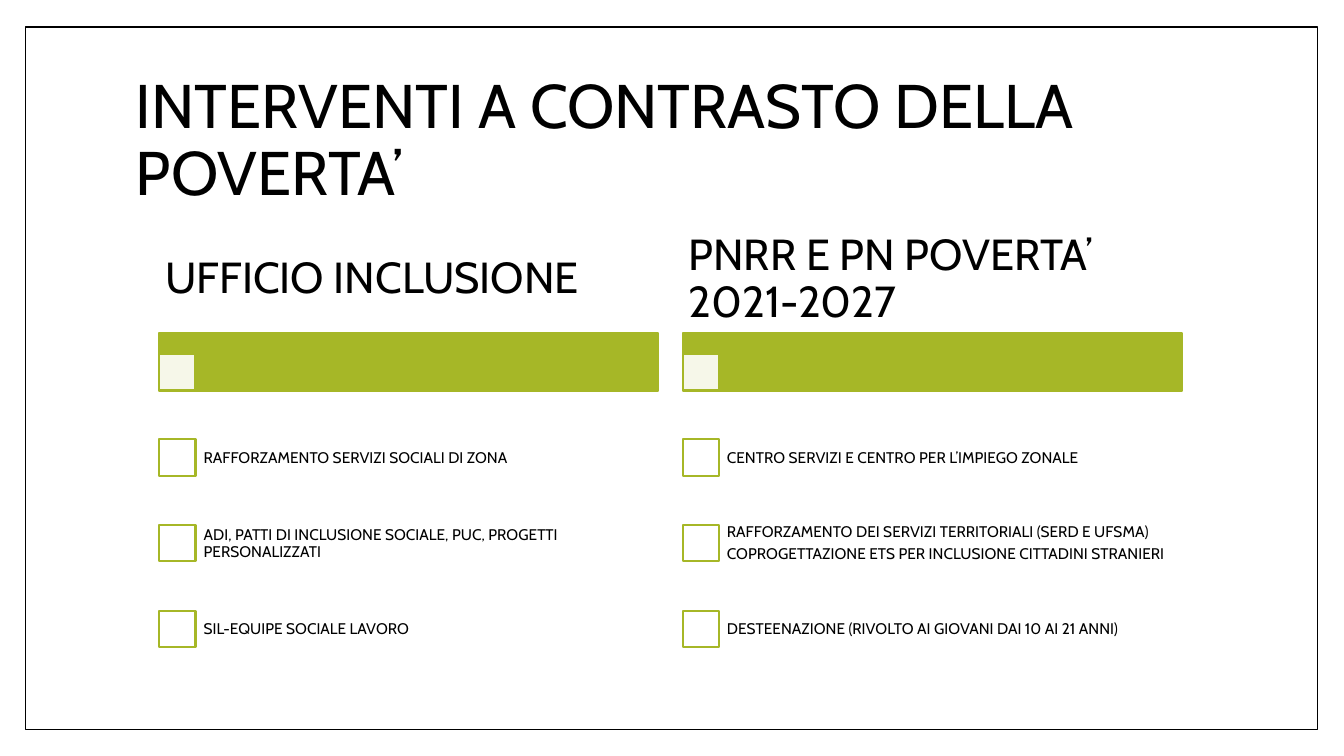
import pptx
import pptx.util
import pptx.dml.color
import pptx.enum.shapes
import pptx.enum.text
import pptx.oxml
import pptx.oxml.ns
from pptx.util import Inches

GREEN = "A6B727"
WHITE = "FFFFFF"
BLACK = "000000"
BOX_SIZE = 0.36
COLUMN_WIDTH = 4.95
ROW_HEIGHT = 0.85
FIRST_ROW_TOP = 4.12

COLUMNS = [
    (1.58, "UFFICIO INCLUSIONE", [
        ["RAFFORZAMENTO SERVIZI SOCIALI DI ZONA"],
        ["ADI, PATTI DI INCLUSIONE SOCIALE, PUC, PROGETTI PERSONALIZZATI"],
        ["SIL-EQUIPE SOCIALE LAVORO"],
    ]),
    (6.77, "PNRR E PN POVERTA’ 2021-2027", [
        ["CENTRO SERVIZI E CENTRO PER L’IMPIEGO ZONALE"],
        ["RAFFORZAMENTO DEI SERVIZI TERRITORIALI (SERD E UFSMA)",
         "COPROGETTAZIONE ETS PER INCLUSIONE CITTADINI STRANIERI"],
        ["DESTEENAZIONE (RIVOLTO AI GIOVANI DAI 10 AI 21 ANNI)"],
    ]),
]


def color(value):
    return pptx.dml.color.RGBColor.from_string(value)


def add_box(slide, left, top, width, height, fill, line=GREEN, line_width=1.5, opacity=100):
    box = slide.shapes.add_shape(
        pptx.enum.shapes.MSO_SHAPE.RECTANGLE,
        Inches(left), Inches(top), Inches(width), Inches(height))
    box.shadow.inherit = False
    box.fill.solid()
    box.fill.fore_color.rgb = color(fill)
    box.line.color.rgb = color(line)
    box.line.width = pptx.util.Pt(line_width)
    if opacity < 100:
        fill_color = box.fill._xPr.find(pptx.oxml.ns.qn("a:solidFill"))[0]
        alpha = pptx.oxml.parse_xml(
            f'<a:alpha {pptx.oxml.ns.nsdecls("a")} val="{opacity * 1000}"/>')
        fill_color.append(alpha)


def add_text(slide, left, top, width, height, lines, size, inset_x, inset_y, space_after):
    frame = slide.shapes.add_textbox(
        Inches(left), Inches(top), Inches(width), Inches(height)).text_frame
    frame.word_wrap = True
    frame.vertical_anchor = pptx.enum.text.MSO_ANCHOR.MIDDLE
    frame.margin_left = frame.margin_right = Inches(inset_x)
    frame.margin_top = frame.margin_bottom = Inches(inset_y)
    frame.text = "\n".join(lines)
    for paragraph in frame.paragraphs:
        paragraph.line_spacing = 0.9
        paragraph.space_after = pptx.util.Pt(space_after)
        paragraph.font.name = "Cabin"
        paragraph.font.size = pptx.util.Pt(size)
        paragraph.font.color.rgb = color(BLACK)


def add_column(slide, left, heading, items):
    add_box(slide, left, 3.3, COLUMN_WIDTH, 0.58, GREEN)
    add_box(slide, left, 3.51, BOX_SIZE, BOX_SIZE, WHITE, opacity=90)
    add_text(slide, left, 2.25, COLUMN_WIDTH, 1.05, [heading], 31, 0.06, 0.04, 11)
    for row, lines in enumerate(items):
        top = FIRST_ROW_TOP + row * ROW_HEIGHT
        add_box(slide, left, top + 0.24, BOX_SIZE, BOX_SIZE, WHITE)
        add_text(slide, left + 0.35, top, 4.6, ROW_HEIGHT, lines, 11, 0.09, 0.09, 4)


def main():
    presentation = pptx.Presentation()
    presentation.slide_width = Inches(13.33)
    presentation.slide_height = Inches(7.5)
    slide = presentation.slides.add_slide(presentation.slide_layouts[6])
    add_box(slide, 0.25, 0.27, 12.82, 6.97, WHITE, BLACK, 1)
    add_text(slide, 1.25, 0.67, 10.8, 1.48,
             ["INTERVENTI A CONTRASTO DELLA POVERTA’"], 44, 0.1, 0.05, 0)
    for left, heading, items in COLUMNS:
        add_column(slide, left, heading, items)
    presentation.save("out.pptx")


if __name__ == "__main__":
    main()
